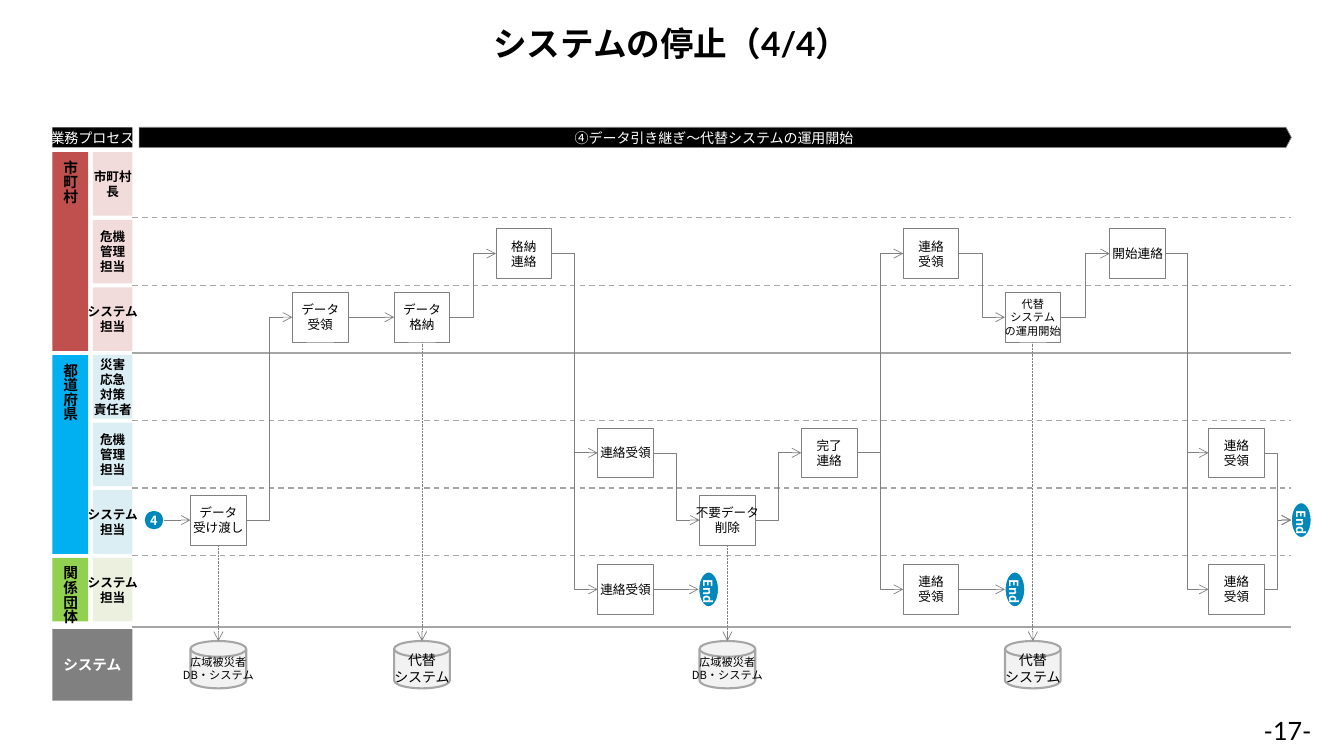
from lxml import etree
from pptx import Presentation
from pptx import util as u
from pptx.dml.color import RGBColor
from pptx.enum import dml, shapes, text
from pptx.oxml import ns

Pt = u.Pt
Kind = shapes.MSO_SHAPE
Dash = dml.MSO_LINE
BLACK = RGBColor(0x00, 0x00, 0x00)
WHITE = RGBColor(0xFF, 0xFF, 0xFF)
GRAY = RGBColor(0x80, 0x80, 0x80)
SILVER = RGBColor(0xA6, 0xA6, 0xA6)
PALE = RGBColor(0xF2, 0xF2, 0xF2)
RED = RGBColor(0xC0, 0x50, 0x4D)
PINK = RGBColor(0xF2, 0xDC, 0xDB)
SKY = RGBColor(0x00, 0xB0, 0xF0)
ICE = RGBColor(0xDB, 0xEE, 0xF4)
GREEN = RGBColor(0x92, 0xD0, 0x50)
LIME = RGBColor(0xEB, 0xF1, 0xDE)
TEAL = RGBColor(0x00, 0x88, 0xBB)
GOTHIC = "Noto Sans CJK JP"

deck = Presentation()
deck.slide_width, deck.slide_height = Pt(960), Pt(540)
slide = deck.slides.add_slide(deck.slide_layouts[6])


def block(kind, x, y, w, h, words, size, fill=None, ink=BLACK, bold=False,
          edge=None, edge_width=0.5, inset=(0, 5.8), vertical=False, face=GOTHIC):
    if kind is None:
        item = slide.shapes.add_textbox(Pt(x), Pt(y), Pt(w), Pt(h))
    else:
        item = slide.shapes.add_shape(kind, Pt(x), Pt(y), Pt(w), Pt(h))
        item.shadow.inherit = False
        item.fill.solid()
        item.fill.fore_color.rgb = fill
        if edge is None:
            item.line.fill.background()
        else:
            item.line.color.rgb = edge
            item.line.width = Pt(edge_width)
    frame = item.text_frame
    frame.word_wrap = False
    frame.vertical_anchor = text.MSO_ANCHOR.MIDDLE
    frame.margin_left = frame.margin_right = Pt(inset[0])
    frame.margin_top = frame.margin_bottom = Pt(inset[1])
    if vertical:
        frame._txBody.bodyPr.set("vert", "eaVert")
    for i, row in enumerate(words.split("\n")):
        para = frame.add_paragraph() if i else frame.paragraphs[0]
        para.alignment = text.PP_ALIGN.CENTER
        for j, piece in enumerate(row.split("|")):
            if j:
                para.add_line_break()
            run = para.add_run()
            run.text = piece
            run.font.name = face
            run.font.size = Pt(size)
            run.font.bold = bold
            run.font.color.rgb = ink
            etree.SubElement(run.font._element, ns.qn("a:ea"), typeface=GOTHIC)
    return item


def link(x1, y1, x2, y2, color=GRAY, width=0.5, dash=None, arrow=True):
    bent = x1 != x2 and abs(y1 - y2) > Pt(1)
    route = shapes.MSO_CONNECTOR.ELBOW if bent else shapes.MSO_CONNECTOR.STRAIGHT
    wire = slide.shapes.add_connector(route, x1, y1, x2, y2)
    wire.line.color.rgb = color
    wire.line.width = Pt(width)
    if dash:
        wire.line.dash_style = dash
    if arrow:
        etree.SubElement(wire.line._get_or_add_ln(), ns.qn("a:tailEnd"), type="arrow")
    etree.SubElement(wire._element.spPr, ns.qn("a:effectLst"))
    return wire


block(None, 37.4, 13, 884.2, 36, "システムの停止（4/4）", 24, bold=True,
      inset=(7.2, 3.6), face="Lato")
block(None, 888.5, 507.6, 62.6, 28.8, "-17-", 18, inset=(7.2, 3.6), face="Lato")

block(Kind.RECTANGLE, 37.4, 91, 57.2, 14.4, "業務プロセス", 10, BLACK, WHITE, inset=(0, 3.6))
phase = block(Kind.PENTAGON, 99.4, 91, 823, 14.4, "④データ引き継ぎ～代替システムの運用開始", 10,
              BLACK, WHITE, edge=GRAY, inset=(2.9, 3.6))
phase.adjustments[0] = 0.264

LANE_TOP, LANE_PITCH, LANE_HEIGHT = 108.7, 48.3, 45.4
organizations = [
    ("市町村", RED, PINK, ["市町村\n長", "危機|管理\n担当", "システム\n担当"]),
    ("都道府県", SKY, ICE, ["災害|応急|対策|責任者", "危機|管理\n担当", "システム\n担当"]),
    ("関係団体", GREEN, LIME, ["システム|担当"]),
]
lane = 0
for organization, strong, light, roles in organizations:
    top = LANE_TOP + LANE_PITCH * lane
    height = LANE_PITCH * (len(roles) - 1) + LANE_HEIGHT
    block(Kind.RECTANGLE, 37.4, top, 25.6, height, organization, 10.5, strong,
          bold=True, vertical=True)
    for role in roles:
        block(Kind.RECTANGLE, 66.4, LANE_TOP + LANE_PITCH * lane, 28.2, LANE_HEIGHT,
              role, 9, light, bold=True)
        lane += 1
block(Kind.RECTANGLE, 37.4, 449.3, 57.2, 51.1, "システム", 10.5, GRAY, WHITE, bold=True)

dividers = [155.5 + LANE_PITCH * i for i in range(6)] + [447.8]
for i, y in enumerate(dividers):
    link(Pt(94.6), Pt(y), Pt(922.3), Pt(y), SILVER, 1,
         None if i in (2, 6) else Dash.DASH, arrow=False)

FIRST_COLUMN, COLUMN_PITCH, STEP_WIDTH, STEP_HEIGHT = 136.1, 72.72, 39.8, 35.5
CITY_CRISIS, CITY_SYSTEM, PREF_CRISIS, PREF_SYSTEM, PARTNER = 181.2, 226.6, 323.5, 371.5, 421
steps = {
    "hand over": (0, PREF_SYSTEM, "データ\n受け渡し", 9),
    "receive": (1, CITY_SYSTEM, "データ\n受領", 9),
    "store": (2, CITY_SYSTEM, "データ\n格納", 9),
    "report stored": (3, CITY_CRISIS, "格納\n連絡", 9),
    "pref informed": (4, PREF_CRISIS, "連絡受領", 9),
    "partner informed": (4, PARTNER, "連絡受領", 9),
    "delete": (5, PREF_SYSTEM, "不要データ\n削除", 9),
    "report done": (6, PREF_CRISIS, "完了\n連絡", 9),
    "city told done": (7, CITY_CRISIS, "連絡\n受領", 9),
    "partner told done": (7, PARTNER, "連絡\n受領", 9),
    "start": (8, CITY_SYSTEM, "代替|システム|の運用開始", 8),
    "report start": (9.03, CITY_CRISIS, "開始連絡", 9),
    "pref told start": (10, PREF_CRISIS, "連絡\n受領", 9),
    "partner told start": (10, PARTNER, "連絡\n受領", 9),
}
nodes = {}
for step, (column, middle, words, size) in steps.items():
    nodes[step] = block(Kind.RECTANGLE, FIRST_COLUMN + COLUMN_PITCH * column,
                        middle - STEP_HEIGHT / 2, STEP_WIDTH, STEP_HEIGHT,
                        words, size, WHITE, edge=GRAY)

markers = {
    "entry": (102.8, PREF_SYSTEM, 14.4, "4"),
    "partner end 1": (499, PARTNER, 25.2, "End"),
    "partner end 2": (717.8, PARTNER, 25.2, "End"),
    "final end": (922.3, PREF_SYSTEM, 25.2, "End"),
}
for marker, (x, middle, height, words) in markers.items():
    nodes[marker] = block(Kind.OVAL, x, middle - height / 2, 14.4, height, words, 9, TEAL, WHITE,
                          bold=True, edge=WHITE, edge_width=1, inset=(2.2, 2.2),
                          vertical=words == "End")

flows = [
    ("entry", "hand over"), ("hand over", "receive"), ("receive", "store"),
    ("store", "report stored"), ("report stored", "pref informed"),
    ("report stored", "partner informed"), ("partner informed", "partner end 1"),
    ("pref informed", "delete"), ("delete", "report done"),
    ("report done", "city told done"), ("report done", "partner told done"),
    ("partner told done", "partner end 2"), ("city told done", "start"),
    ("start", "report start"), ("report start", "pref told start"),
    ("report start", "partner told start"), ("pref told start", "final end"),
    ("partner told start", "final end"),
]
for source, target in flows:
    a, b = nodes[source], nodes[target]
    wire = link(a.left + a.width, a.top + a.height // 2, b.left, b.top + b.height // 2)
    if source in steps:
        wire.begin_connect(a, 3)
    if target in steps:
        wire.end_connect(b, 1)

DISK_TOP = 457.9
databases = [
    ("hand over", "広域被災者\nDB・システム", 8),
    ("store", "代替\nシステム", 10),
    ("delete", "広域被災者\nDB・システム", 8),
    ("start", "代替\nシステム", 10),
]
for step, words, size in databases:
    node = nodes[step]
    block(Kind.FLOWCHART_MAGNETIC_DISK, node.left.pt, DISK_TOP, STEP_WIDTH, 33.8, words, size,
          PALE, edge=SILVER, edge_width=1.5, inset=(0, 0))
    center = node.left + node.width // 2
    wire = link(center, node.top + node.height, center, Pt(DISK_TOP), dash=Dash.ROUND_DOT)
    wire.begin_connect(node, 2)

deck.save("out.pptx")
